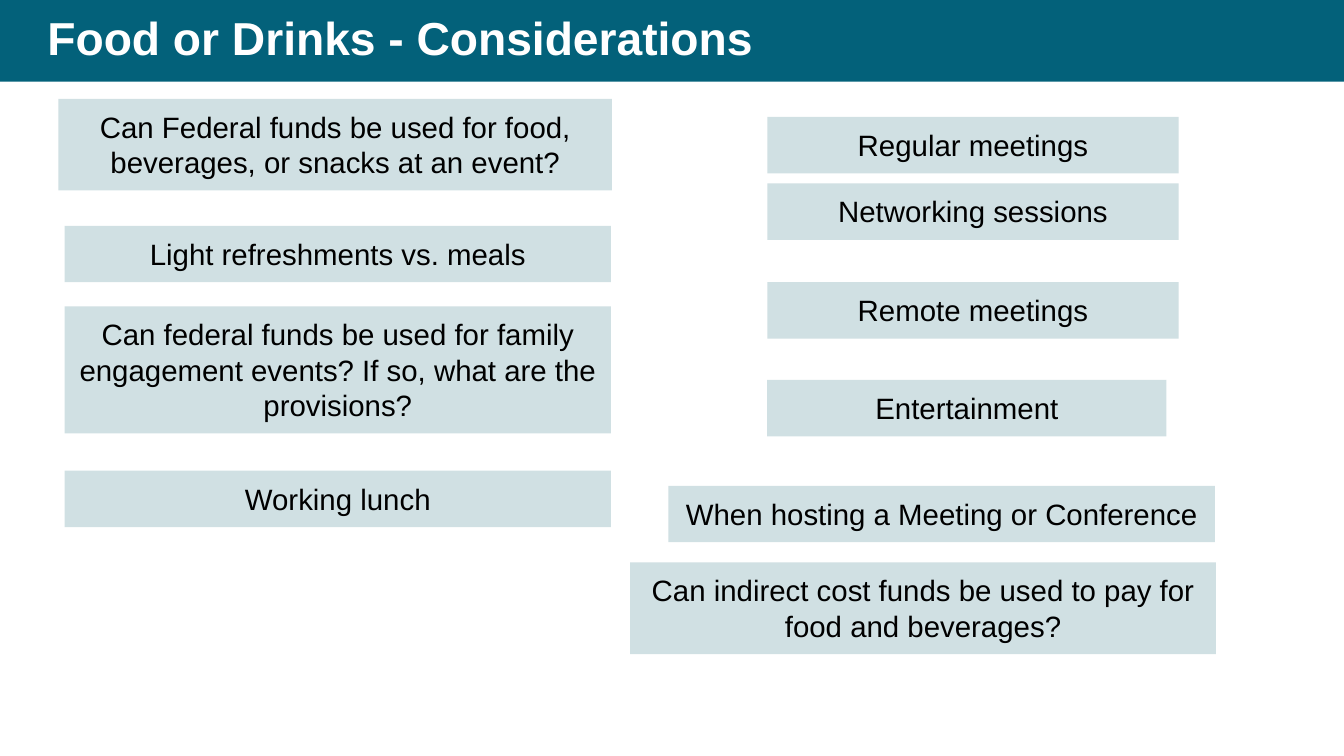
from pptx import Presentation
from pptx.dml.color import RGBColor
from pptx.enum.shapes import MSO_SHAPE
from pptx.enum.text import MSO_ANCHOR, MSO_AUTO_SIZE, PP_ALIGN
from pptx.util import Inches, Pt

COLORS = {"band": "03617A", "card": "D0E0E3", "title": "FFFFFF", "text": "000000"}
FONT = "Arial"
SLIDE_WIDTH, SLIDE_HEIGHT = 13.33, 7.5
BAND_HEIGHT = 0.81
CARD_HEIGHTS = {1: 0.56, 2: 0.91, 3: 1.26}

LEFT_TOPICS = [
    (-0.06, 0.98, 5.49, 2, "Can Federal funds be used for food, beverages, or snacks at an event?"),
    (0, 2.24, 5.42, 1, "Light refreshments vs. meals"),
    (0, 3.04, 5.42, 3, "Can federal funds be used for family engagement events? "
                       "If so, what are the provisions?"),
    (0, 4.67, 5.42, 1, "Working lunch"),
]
RIGHT_TOPICS = [
    (1.36, 1.16, 4.08, 1, "Regular meetings"),
    (1.36, 1.82, 4.08, 1, "Networking sessions"),
    (1.36, 2.8, 4.08, 1, "Remote meetings"),
    (1.36, 3.77, 3.96, 1, "Entertainment"),
    (0.38, 4.82, 5.42, 1, "When hosting a Meeting or Conference"),
    (0, 5.58, 5.81, 2, "Can indirect cost funds be used to pay for food and beverages?"),
]


def add_block(slide, left, top, width, height, color):
    """Add a flat rectangle without an outline."""
    block = slide.shapes.add_shape(
        MSO_SHAPE.RECTANGLE, Inches(left), Inches(top), Inches(width), Inches(height))
    block.shadow.inherit = False
    block.fill.solid()
    block.fill.fore_color.rgb = RGBColor.from_string(COLORS[color])
    block.line.fill.background()
    return block


def add_text(paragraph, text, size, color, bold=False):
    """Add one formatted run to a paragraph."""
    run = paragraph.add_run()
    run.text = text
    run.font.name = FONT
    run.font.size = Pt(size)
    run.font.bold = bold
    run.font.color.rgb = RGBColor.from_string(COLORS[color])


def add_header(slide, left, top, width, height, text):
    """Place the title over a full-width band."""
    title = slide.shapes.title
    band = add_block(slide, left, top, width, height, "band")
    title.element.addprevious(band.element)
    title.left, title.top = Inches(left + 0.37), Inches(top)
    title.width, title.height = Inches(width - 1.01), Inches(height)
    frame = title.text_frame
    frame.word_wrap = True
    frame.auto_size = MSO_AUTO_SIZE.NONE
    frame.vertical_anchor = MSO_ANCHOR.MIDDLE
    frame.margin_left = frame.margin_right = Inches(0.1)
    frame.margin_top = frame.margin_bottom = Inches(0.05)
    heading = frame.paragraphs[0]
    heading.alignment = PP_ALIGN.LEFT
    heading.line_spacing = 0.9
    add_text(heading, text, 33, "title", bold=True)


def add_topics(slide, left, top, topics):
    """Place a column of topic cards by their offsets from its corner."""
    for offset_x, offset_y, width, lines, text in topics:
        card = add_block(slide, left + offset_x, top + offset_y,
                         width, CARD_HEIGHTS[lines], "card")
        frame = card.text_frame
        frame.word_wrap = True
        frame.auto_size = MSO_AUTO_SIZE.SHAPE_TO_FIT_TEXT
        frame.vertical_anchor = MSO_ANCHOR.TOP
        frame.margin_left = frame.margin_right = Inches(0.1)
        frame.margin_top = frame.margin_bottom = Inches(0.1)
        topic = frame.paragraphs[0]
        topic.alignment = PP_ALIGN.CENTER
        add_text(topic, text, 21, "text")


def main():
    """Build and save the slide."""
    presentation = Presentation()
    presentation.slide_width = Inches(SLIDE_WIDTH)
    presentation.slide_height = Inches(SLIDE_HEIGHT)
    slide = presentation.slides.add_slide(presentation.slide_layouts.get_by_name("Title Only"))
    add_header(slide, 0, 0, SLIDE_WIDTH, BAND_HEIGHT, "Food or Drinks - Considerations")
    add_topics(slide, 0.64, 0, LEFT_TOPICS)
    add_topics(slide, 6.25, 0, RIGHT_TOPICS)
    presentation.save("out.pptx")


if __name__ == "__main__":
    main()
